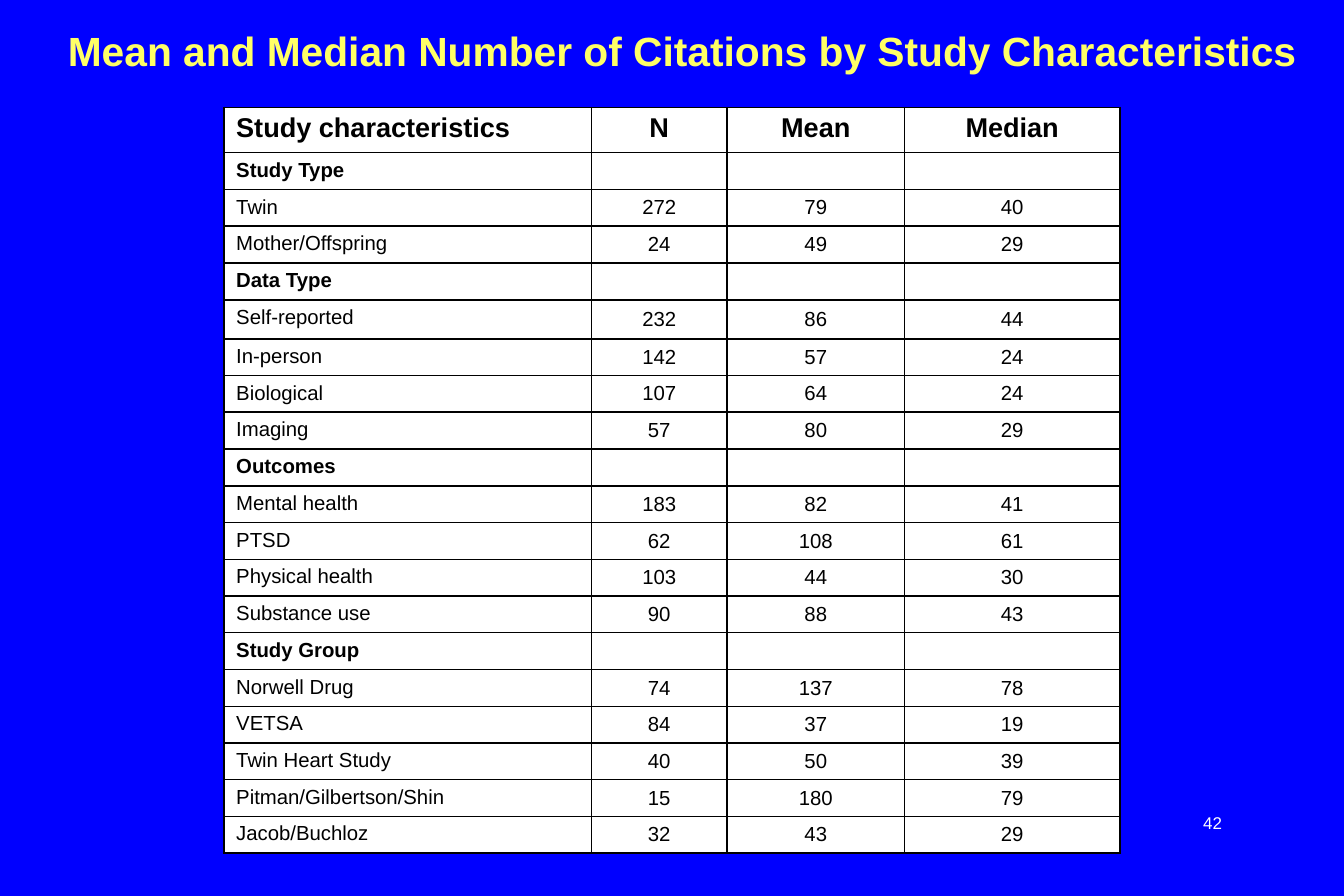
from lxml.etree import SubElement
from pptx import Presentation
from pptx.dml.color import RGBColor
from pptx.enum.text import MSO_ANCHOR as Anchor, PP_ALIGN as Align
from pptx.oxml import parse_xml
from pptx.oxml.ns import nsdecls, qn
from pptx.util import Pt

TITLE = "Mean and Median Number of Citations by Study Characteristics"
PAGE_NUMBER = "42"
HEADINGS = ("Study characteristics", "N", "Mean", "Median")
GROUPS = {
    "Study Type": [("Twin", 272, 79, 40), ("Mother/Offspring", 24, 49, 29)],
    "Data Type": [
        ("Self-reported", 232, 86, 44),
        ("In-person", 142, 57, 24),
        ("Biological", 107, 64, 24),
        ("Imaging", 57, 80, 29),
    ],
    "Outcomes": [
        ("Mental health", 183, 82, 41),
        ("PTSD", 62, 108, 61),
        ("Physical health", 103, 44, 30),
        ("Substance use", 90, 88, 43),
    ],
    "Study Group": [
        ("Norwell Drug", 74, 137, 78),
        ("VETSA", 84, 37, 19),
        ("Twin Heart Study", 40, 50, 39),
        ("Pitman/Gilbertson/Shin", 15, 180, 79),
        ("Jacob/Buchloz", 32, 43, 29),
    ],
}
COLORS = {"background": "0000FF", "title": "FFFF66", "number": "FFFFFF",
          "cell": "FFFFFF", "ink": "000000"}
FONT = "Arial"
COLUMN_WIDTHS = (216.5, 80, 104.5, 127)
HEADER_HEIGHT, ROW_HEIGHT = 26.6, 21.6
TALL_ROWS = {"Self-reported": 23}


def color(name):
    return RGBColor.from_string(COLORS[name])


def write(paragraph, text, size, ink, bold=False, align=Align.LEFT):
    paragraph.alignment = align
    run = paragraph.add_run()
    run.text = text
    font = run.font
    font.name, font.size, font.bold = FONT, Pt(size), bold
    font.color.rgb = color(ink)


def add_borders(cell):
    properties = cell._tc.get_or_add_tcPr()
    for place, side in enumerate(("lnL", "lnR", "lnT", "lnB")):
        properties.insert(place, parse_xml(
            f'<a:{side} {nsdecls("a")} w="{Pt(1)}"><a:solidFill>'
            f'<a:srgbClr val="{COLORS["ink"]}"/></a:solidFill></a:{side}>'))


def fill_cell(cell, text, size, bold, align, anchor):
    cell.fill.solid()
    cell.fill.fore_color.rgb = color("cell")
    cell.vertical_anchor = anchor
    add_borders(cell)
    paragraph = cell.text_frame.paragraphs[0]
    if text:
        write(paragraph, text, size, "ink", bold, align)
    else:
        # An empty cell would otherwise take the default size and stretch its row.
        SubElement(paragraph._p, qn("a:endParaRPr"), sz=str(size * 100))


def add_citation_table(slide):
    rows = [HEADINGS]
    for group, studies in GROUPS.items():
        rows += [(group, "", "", ""), *studies]
    heights = [HEADER_HEIGHT] + [TALL_ROWS.get(row[0], ROW_HEIGHT) for row in rows[1:]]
    frame = slide.shapes.add_table(len(rows), len(HEADINGS), Pt(132), Pt(63.2),
                                   Pt(sum(COLUMN_WIDTHS)), Pt(sum(heights)))
    table = frame.table
    table.horz_banding = False
    for column, width in zip(table.columns, COLUMN_WIDTHS):
        column.width = Pt(width)
    for r, (values, height) in enumerate(zip(rows, heights)):
        table.rows[r].height = Pt(height)
        is_header = r == 0
        bold = is_header or values[0] in GROUPS
        for c, value in enumerate(values):
            fill_cell(table.cell(r, c), str(value), 16 if is_header else 12, bold,
                      Align.CENTER if c else Align.LEFT,
                      Anchor.MIDDLE if c and not bold else Anchor.TOP)


def main():
    deck = Presentation()
    deck.slide_width, deck.slide_height = Pt(792), Pt(528)
    slide = deck.slides.add_slide(deck.slide_layouts[5])
    slide.background.fill.solid()
    slide.background.fill.fore_color.rgb = color("background")

    title = slide.shapes.title
    title.left, title.top, title.width, title.height = Pt(24), Pt(11.5), Pt(756), Pt(36.5)
    title.text_frame.vertical_anchor = Anchor.MIDDLE
    write(title.text_frame.paragraphs[0], TITLE, 24, "title", True, Align.CENTER)

    add_citation_table(slide)

    number = slide.shapes.add_textbox(Pt(702), Pt(475), Pt(31), Pt(35)).text_frame
    number.word_wrap = True
    write(number.paragraphs[0], PAGE_NUMBER, 10, "number")

    deck.save("out.pptx")


if __name__ == "__main__":
    main()
